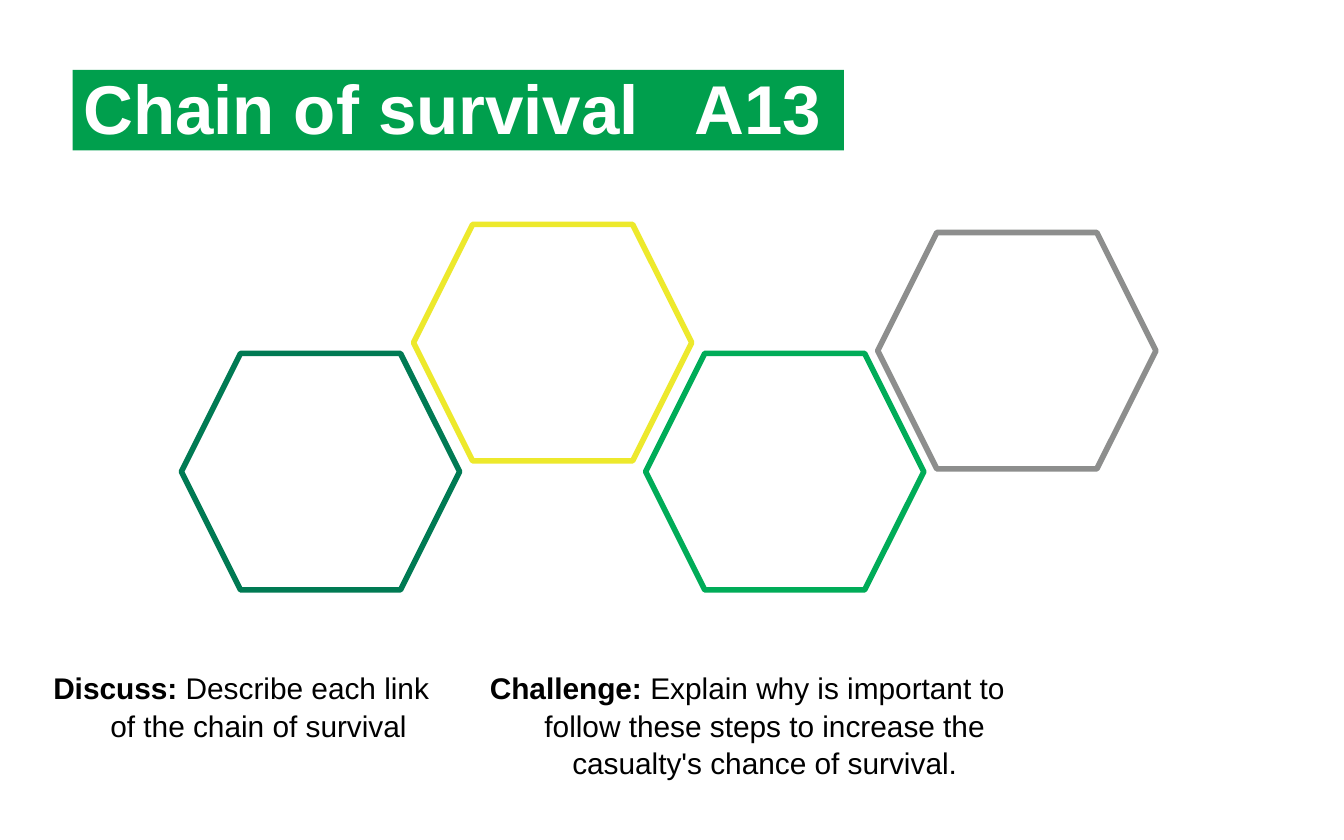
from dataclasses import dataclass

from lxml import etree
from pptx import Presentation
from pptx import util as u
from pptx.dml.color import RGBColor
from pptx.enum import shapes, text
from pptx.oxml import ns


@dataclass(frozen=True)
class Theme:
    font: str = "Arial"
    title_size: int = 37
    body_size: int = 16
    title_text: str = "FFFFFF"
    body_text: str = "000000"
    banner: str = "009F4D"
    links: tuple = ("007A53", "EDE92C", "00AC58", "8D8E8D")
    link_line: int = 3


class ChainSlide:
    """Holds the theme and the current slide, and draws each kind of element."""

    def __init__(self, theme, page):
        self.theme = theme
        self.page = page

    def add_shape(self, kind, left, top, width, height):
        shape = self.page.shapes.add_shape(
            kind, u.Inches(left), u.Inches(top), u.Inches(width), u.Inches(height))
        shape.shadow.inherit = False
        return shape

    def set_frame(self, box):
        frame = box.text_frame
        frame.word_wrap = True
        frame.vertical_anchor = text.MSO_ANCHOR.TOP
        frame.margin_left = frame.margin_right = u.Inches(0.08)
        frame.margin_top = frame.margin_bottom = u.Inches(0.04)
        return frame.paragraphs[0]

    def set_font(self, para, size, color):
        para.font.name = self.theme.font
        para.font.size = u.Pt(size)
        para.font.color.rgb = RGBColor.from_string(color)

    def banner(self, words, tab, left, top, width, height):
        box = self.add_shape(shapes.MSO_SHAPE.RECTANGLE, left, top, width, height)
        box.fill.solid()
        box.fill.fore_color.rgb = RGBColor.from_string(self.theme.banner)
        box.line.fill.background()
        para = self.set_frame(box)
        para.alignment = text.PP_ALIGN.LEFT
        para.line_spacing = 0.9
        para.add_run().text = words
        stops = etree.SubElement(para._p.get_or_add_pPr(), ns.qn("a:tabLst"))
        etree.SubElement(stops, ns.qn("a:tab"), pos=str(u.Inches(tab)), algn="l")
        self.set_font(para, self.theme.title_size, self.theme.title_text)
        para.font.bold = True

    def link(self, color, left, top):
        hexagon = self.add_shape(shapes.MSO_SHAPE.HEXAGON, left, top, 2.07, 1.76)
        hexagon.fill.background()
        hexagon.line.color.rgb = RGBColor.from_string(color)
        hexagon.line.width = u.Pt(self.theme.link_line)

    def task(self, label, words, left, width, height):
        box = self.page.shapes.add_textbox(
            u.Inches(left), u.Inches(4.93), u.Inches(width), u.Inches(height))
        para = self.set_frame(box)
        para.alignment = text.PP_ALIGN.CENTER
        para.line_spacing = 1.05
        indent = u.Inches(0.26)
        properties = para._p.get_or_add_pPr()
        properties.set("marL", str(indent))
        properties.set("indent", str(-indent))
        self.set_font(para, self.theme.body_size, self.theme.body_text)
        for part, bold in ((label + " ", True), (words, False)):
            span = para.add_run()
            span.text = part
            span.font.bold = bold


def main():
    deck = Presentation()
    deck.slide_width, deck.slide_height = u.Inches(10), u.Inches(6.25)
    theme = Theme()
    slide = ChainSlide(theme, deck.slides.add_slide(deck.slide_layouts[6]))

    slide.banner("Chain of survival\tA13", 4.55, 0.54, 0.52, 5.74, 0.6)
    link_tops = (2.63, 1.67, 2.63, 1.73)
    for index, (color, top) in enumerate(zip(theme.links, link_tops)):
        slide.link(color, 1.35 + 1.727 * index, top)
    slide.task("Discuss:", "Describe each link of the chain of survival", 0.21, 3.17, 0.7)
    slide.task("Challenge:",
               "Explain why is important to follow these steps to increase "
               "the casualty's chance of survival.", 3.49, 4.14, 1.08)
    deck.save("out.pptx")


if __name__ == "__main__":
    main()
